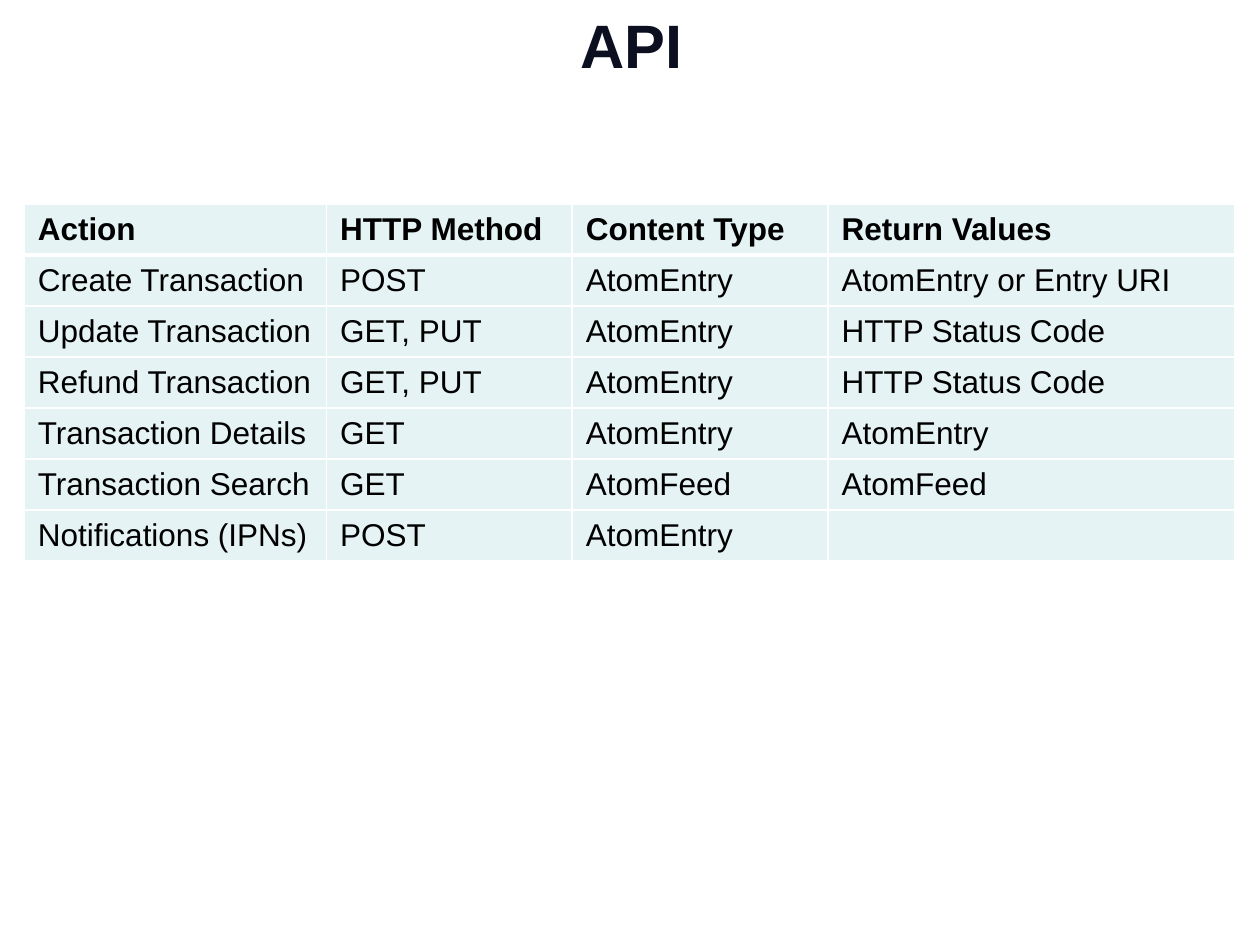
from typing import NamedTuple

from lxml import etree
from pptx import Presentation
from pptx.dml.color import RGBColor
from pptx.enum import text
from pptx.oxml.ns import qn
from pptx.util import Inches, Pt

FONT = "Arial"
COLORS = {"title": "0C0F20", "text": "000000", "cell": "BBE0E3", "border": "FFFFFF"}
CELL_OPACITY = 38
COLUMN_WIDTHS = (2.4, 1.95, 2.03, 3.23)
ROW_HEIGHT = 0.405
THIN, THICK = 1, 3


class ApiCall(NamedTuple):
    action: str
    method: str
    content_type: str
    returns: str


HEADER = ApiCall("Action", "HTTP Method", "Content Type", "Return Values")
CALLS = [
    ApiCall("Create Transaction", "POST", "AtomEntry", "AtomEntry or Entry URI"),
    ApiCall("Update Transaction", "GET, PUT", "AtomEntry", "HTTP Status Code"),
    ApiCall("Refund Transaction", "GET, PUT", "AtomEntry", "HTTP Status Code"),
    ApiCall("Transaction Details", "GET", "AtomEntry", "AtomEntry"),
    ApiCall("Transaction Search", "GET", "AtomFeed", "AtomFeed"),
    ApiCall("Notifications (IPNs)", "POST", "AtomEntry", ""),
]


def add_run(p, content: str, size: float, color: str, bold: bool) -> None:
    r = p.add_run()
    r.text = content
    r.font.name = FONT
    r.font.size = Pt(size)
    r.font.bold = bold
    r.font.color.rgb = RGBColor.from_string(COLORS[color])


def set_borders(cell, top: float, bottom: float) -> None:
    """Draw the four cell edges; the side edges are always thin."""
    tc_pr = cell._tc.get_or_add_tcPr()
    edges = {"lnL": THIN, "lnR": THIN, "lnT": top, "lnB": bottom}
    for position, (edge, width) in enumerate(edges.items()):
        ln = etree.Element(qn(f"a:{edge}"), w=str(Pt(width)))
        fill = etree.SubElement(ln, qn("a:solidFill"))
        etree.SubElement(fill, qn("a:srgbClr"), val=COLORS["border"])
        tc_pr.insert(position, ln)


def fill_cell(cell) -> None:
    cell.fill.solid()
    cell.fill.fore_color.rgb = RGBColor.from_string(COLORS["cell"])
    color = cell._tc.tcPr.find(f"{qn('a:solidFill')}/{qn('a:srgbClr')}")
    etree.SubElement(color, qn("a:alpha"), val=str(CELL_OPACITY * 1000))


def add_title(s, content: str) -> None:
    sp = s.shapes.title
    sp.left, sp.top = Inches(0.2), Inches(0)
    sp.width, sp.height = Inches(9.62), Inches(0.7)
    tf = sp.text_frame
    tf.margin_left = tf.margin_right = Inches(0.04)
    tf.margin_top = tf.margin_bottom = Inches(0.04)
    tf.vertical_anchor = text.MSO_ANCHOR.MIDDLE
    p = tf.paragraphs[0]
    p.alignment = text.PP_ALIGN.CENTER
    add_run(p, content, 35, "title", True)


def add_api_table(s, rows: list[ApiCall]) -> None:
    """Build the table; the first row is the header."""
    table = s.shapes.add_table(
        len(rows), len(COLUMN_WIDTHS), Inches(0.19), Inches(1.62),
        Inches(sum(COLUMN_WIDTHS)), Inches(ROW_HEIGHT * len(rows)),
    ).table
    table.horz_banding = False
    for column, width in zip(table.columns, COLUMN_WIDTHS):
        column.width = Inches(width)
    for i, row in enumerate(rows):
        table.rows[i].height = Inches(ROW_HEIGHT)
        for j, content in enumerate(row):
            cell = table.cell(i, j)
            cell.vertical_anchor = text.MSO_ANCHOR.MIDDLE
            cell.margin_left = cell.margin_right = Inches(0.11)
            cell.margin_top = cell.margin_bottom = Inches(0.05)
            fill_cell(cell)
            set_borders(cell, THICK if i == 1 else THIN, THICK if i == 0 else THIN)
            if content:
                add_run(cell.text_frame.paragraphs[0], content, 18, "text", i == 0)


def main() -> None:
    prs = Presentation()
    prs.slide_width, prs.slide_height = Inches(10), Inches(7.5)
    s = prs.slides.add_slide(prs.slide_layouts[5])
    add_title(s, "API")
    add_api_table(s, [HEADER, *CALLS])
    prs.save("out.pptx")


if __name__ == "__main__":
    main()
